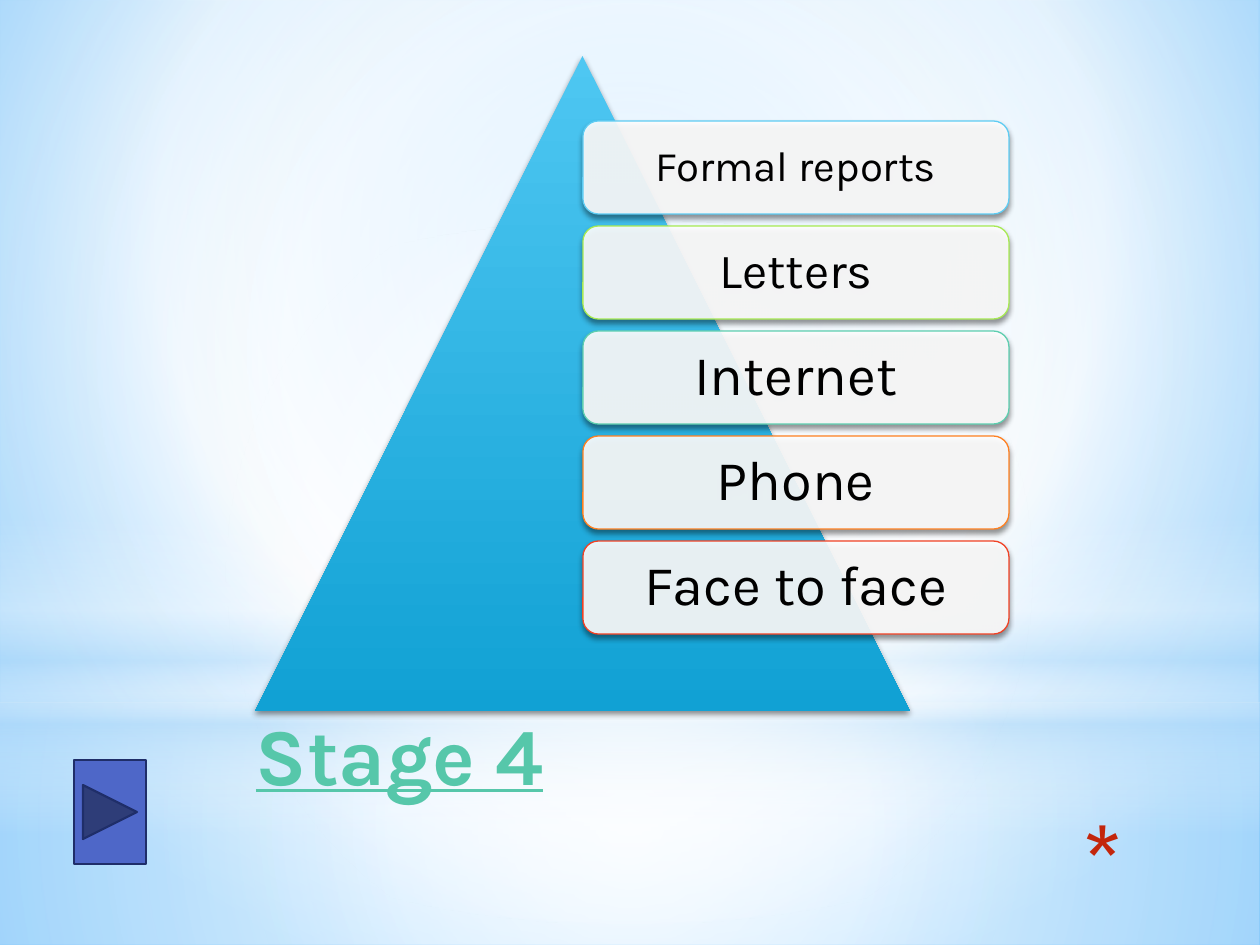
from lxml.etree import SubElement
from pptx import Presentation
from pptx.dml.color import RGBColor
from pptx.enum.shapes import MSO_SHAPE
from pptx.enum.text import MSO_ANCHOR, PP_ALIGN
from pptx.oxml.ns import qn
from pptx.util import Emu, Pt

PX = 7257.6  # EMU per px, 126 px to the inch
FONT = "Karla"
CENTRE = (50, 50, 50, 50)

# Content: label, text size, outline colour
CARDS = [
    ("Formal reports", 24, "5ECCF3"),
    ("Letters", 28, "A7EA52"),
    ("Internet", 32, "5DCEAF"),
    ("Phone", 32, "FF8021"),
    ("Face to face", 32, "F14124"),
]
CARD_LEFT, CARD_TOP, CARD_WIDTH, CARD_HEIGHT, CARD_STEP = 583, 121, 426, 93, 105

# Gradient stops: position, colour, opacity (all in percent)
PAGE_STOPS = [(0, "9ED5FF", 100), (60, "FFFFFF", 100), (100, "5BB9FF", 100)]
PYRAMID_STOPS = [(0, "4EC7F2", 100), (100, "11A1D4", 100)]
# Backdrop: shape, place, stops, focus of a circular gradient (None: downwards)
BACKDROP = [
    (MSO_SHAPE.RECTANGLE, (0, 703, 1260, 242),
     [(0, "FFFFFF", 91), (37, "FFFFFF", 76), (100, "B4DCFA", 79)], CENTRE),
    (MSO_SHAPE.RECTANGLE, (0, 0, 1260, 703),
     [(0, "FFFFFF", 89), (48, "FFFFFF", 62), (100, "B4DCFA", 79)], CENTRE),
    (MSO_SHAPE.RECTANGLE, (0, 519, 1260, 315),
     [(0, "FFFFFF", 0), (29, "FFFFFF", 30), (45, "B4DCFA", 40),
      (55, "FFFFFF", 26), (65, "B4DCFA", 60), (100, "FFFFFF", 0)], None),
    (MSO_SHAPE.OVAL, (0, 221, 1260, 703),
     [(0, "FFFFFF", 100), (56, "FFFFFF", 0)], CENTRE),
]


def px(*lengths):
    return [Emu(round(length * PX)) for length in lengths]


def colour(value):
    return RGBColor.from_string(value)


def add_colour(parent, value, opacity):
    node = SubElement(parent, qn("a:srgbClr"), val=value)
    if opacity < 100:
        SubElement(node, qn("a:alpha"), val=str(opacity * 1000))


def set_gradient(owner, fill, stops, focus=None):
    fill.solid()
    gradient = owner.element.find(".//" + qn("a:solidFill"))
    gradient.clear()
    parent = gradient.getparent()
    new = parent.makeelement(qn("a:gradFill"), {"rotWithShape": "1"})
    parent.replace(gradient, new)
    stop_list = SubElement(new, qn("a:gsLst"))
    for position, value, opacity in stops:
        stop = SubElement(stop_list, qn("a:gs"), pos=str(position * 1000))
        add_colour(stop, value, opacity)
    if focus:
        way = SubElement(new, qn("a:path"), {"path": "circle"})
        sides = {side: str(part * 1000) for side, part in zip("ltrb", focus)}
        SubElement(way, qn("a:fillToRect"), sides)
    else:
        SubElement(new, qn("a:lin"), ang="5400000", scaled="0")


def add_shape(page, kind, place):
    shape = page.shapes.add_shape(kind, *px(*place))
    shape.shadow.inherit = False
    shape.line.fill.background()
    return shape


def add_shadow(shape):
    effects = shape.element.spPr.find(qn("a:effectLst"))
    shadow = SubElement(effects, qn("a:outerShdw"), blurRad=str(Pt(3.1)),
                        dist=str(Pt(1.8)), dir="5400000", rotWithShape="0")
    add_colour(shadow, "000000", 45)


def set_outline(shape, value, width):
    shape.line.color.rgb = colour(value)
    shape.line.width = Pt(width)


def set_text(shape, text, size, value, align, anchor, insets=(0, 0, 0, 0)):
    frame = shape.text_frame
    frame.text = text
    frame.word_wrap = True
    frame.vertical_anchor = anchor
    (frame.margin_left, frame.margin_top,
     frame.margin_right, frame.margin_bottom) = px(*insets)
    para = frame.paragraphs[0]
    para.alignment = align
    font = para.runs[0].font
    font.name, font.size, font.color.rgb = FONT, Pt(size), colour(value)
    return para


def main():
    deck = Presentation()
    deck.slide_width, deck.slide_height = px(1260, 945)
    page = deck.slides.add_slide(deck.slide_layouts[5])

    # Backdrop
    set_gradient(page, page.background.fill, PAGE_STOPS, (20, 10, 20, 60))
    for kind, place, stops, focus in BACKDROP:
        shape = add_shape(page, kind, place)
        set_gradient(shape, shape.fill, stops, focus)

    # Title, lifted above the backdrop, and its red star
    title = page.shapes.title
    page.shapes.element.append(title.element)
    title.left, title.top, title.width, title.height = px(243, 690, 897, 158)
    para = set_text(title, "Stage 4", 46, "56C7AA", PP_ALIGN.LEFT,
                    MSO_ANCHOR.TOP, (13, 15, 13, 6))
    para.runs[0].font.bold = para.runs[0].font.underline = True
    star = page.shapes.add_textbox(*px(1063, 793, 80, 120))
    set_text(star, "*", 59, "C3260C", PP_ALIGN.CENTER, MSO_ANCHOR.TOP)

    # Pyramid
    pyramid = add_shape(page, MSO_SHAPE.ISOSCELES_TRIANGLE, (255, 56, 655, 655))
    set_gradient(pyramid, pyramid.fill, PYRAMID_STOPS)
    add_shadow(pyramid)

    # Cards
    for index, (label, size, outline) in enumerate(CARDS):
        top = CARD_TOP + index * CARD_STEP
        card = add_shape(page, MSO_SHAPE.ROUNDED_RECTANGLE,
                         (CARD_LEFT, top, CARD_WIDTH, CARD_HEIGHT))
        card.fill.solid()
        card.fill.fore_color.rgb = colour("FFFFFF")
        white = card.element.spPr.find(".//" + qn("a:srgbClr"))
        SubElement(white, qn("a:alpha"), val="90000")
        set_outline(card, outline, 0.75)
        add_shadow(card)
        para = set_text(card, label, size, "000000", PP_ALIGN.CENTER,
                        MSO_ANCHOR.MIDDLE)
        para.line_spacing = 0.9

    # Forward button
    button = add_shape(page, MSO_SHAPE.ACTION_BUTTON_FORWARD_OR_NEXT,
                       (74, 760, 72, 104))
    button.fill.solid()
    button.fill.fore_color.rgb = colour("4E67C8")
    set_outline(button, "1F2E69", 1.25)

    deck.save("out.pptx")


if __name__ == "__main__":
    main()
